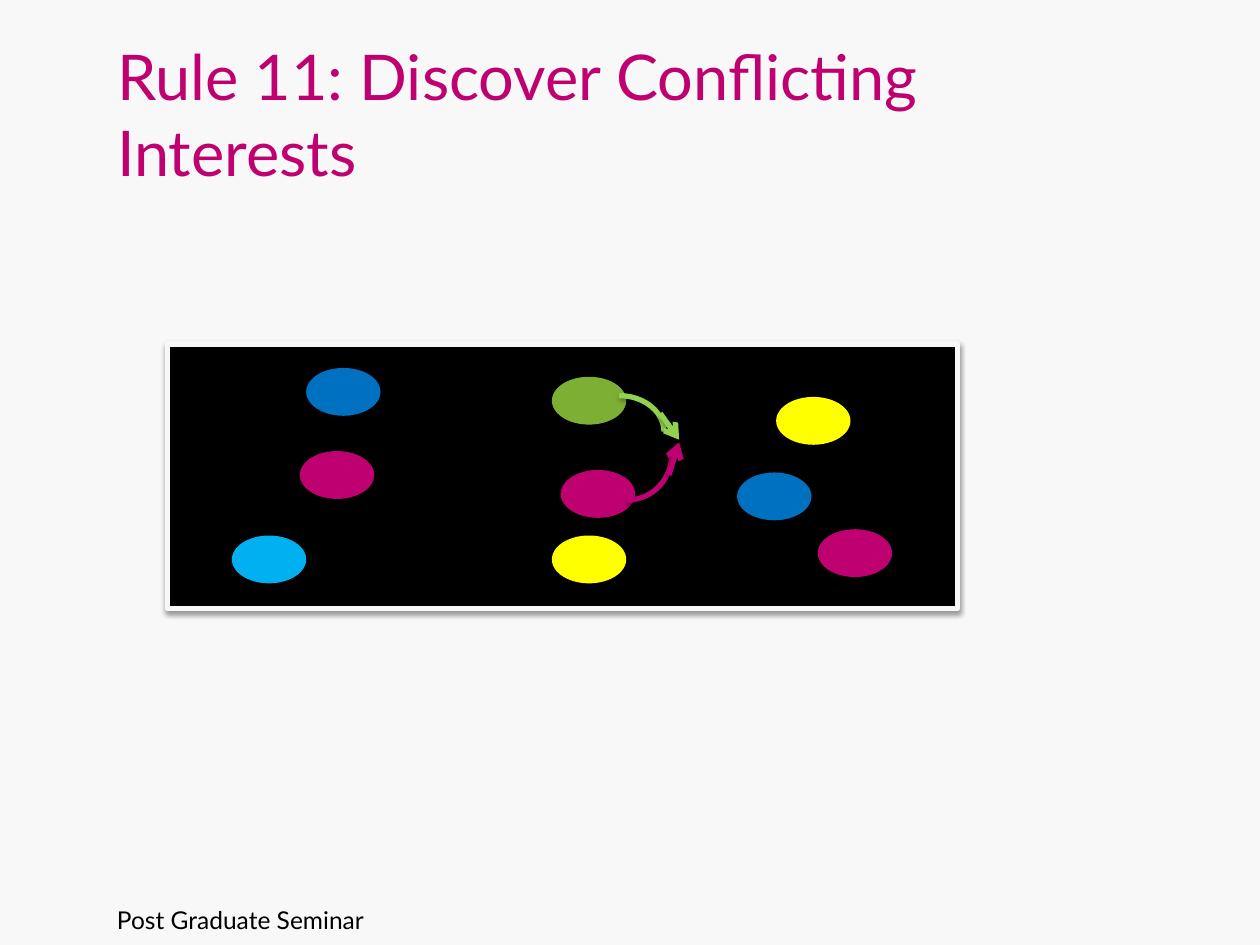
from lxml import etree
from pptx import Presentation
from pptx.dml.color import RGBColor
from pptx.enum.shapes import MSO_CONNECTOR, MSO_SHAPE
from pptx.enum.text import MSO_ANCHOR, PP_ALIGN
from pptx.oxml.ns import qn
from pptx.util import Inches, Pt

RECTANGLE, ELLIPSE, ARC = MSO_SHAPE.RECTANGLE, MSO_SHAPE.OVAL, MSO_SHAPE.ARC
STRAIGHT = MSO_CONNECTOR.STRAIGHT
TOP, BOTTOM, LEFT = MSO_ANCHOR.TOP, MSO_ANCHOR.BOTTOM, PP_ALIGN.LEFT

COLORS = {
    "background": "F8F8F8", "black": "000000", "magenta": "BF0071",
    "blue": "0070C0", "sky": "00B0F0", "yellow": "FFFF00",
    "green": "7EAF35", "lime": "92D050",
}
INTERESTS = [
    ("magenta", 4.45, 3.73), ("magenta", 6.49, 4.2), ("blue", 2.43, 2.92),
    ("sky", 1.84, 4.25), ("yellow", 4.38, 4.25), ("green", 4.38, 2.99),
    ("yellow", 6.16, 3.15), ("blue", 5.85, 3.75), ("magenta", 2.38, 3.58),
]


class SlideBuilder:
    """Hold the slide and its style, and draw each kind of element."""

    font_name = "Lato"
    line_width = Pt(3)
    interest_size = (0.59, 0.38)

    def __init__(self, slide):
        self.slide = slide
        fill = slide.background.fill
        fill.solid()
        fill.fore_color.rgb = self.color("background")

    def color(self, name):
        return RGBColor.from_string(COLORS[name])

    def set_text(self, shape, text, size, color, anchor):
        frame = shape.text_frame
        frame.text = text
        for name, value in {"word_wrap": True, "vertical_anchor": anchor}.items():
            setattr(frame, name, value)
        paragraph = frame.paragraphs[0]
        paragraph.alignment = LEFT
        font = paragraph.runs[0].font
        for name, value in {"name": self.font_name, "size": Pt(size)}.items():
            setattr(font, name, value)
        font.color.rgb = self.color(color)

    def title(self, text, left, top, width, height):
        shape = self.slide.shapes.title
        bounds = {"left": left, "top": top, "width": width, "height": height}
        for name, value in bounds.items():
            setattr(shape, name, Inches(value))
        self.set_text(shape, text, 36, "magenta", BOTTOM)

    def footer(self, text, *bounds):
        shape = self.slide.shapes.add_textbox(*map(Inches, bounds))
        self.set_text(shape, text, 14, "black", TOP)

    def shape(self, kind, bounds, fill=None, line=None):
        shape = self.slide.shapes.add_shape(kind, *map(Inches, bounds))
        shape.shadow.inherit = False
        if fill:
            shape.fill.solid()
            shape.fill.fore_color.rgb = self.color(fill)
        else:
            shape.fill.background()
        if line:
            self.outline(shape, line)
        else:
            shape.line.fill.background()
        return shape

    def outline(self, shape, color):
        shape.line.color.rgb = self.color(color)
        shape.line.width = self.line_width

    def shadow(self, effects, opacity, distance):
        shadow = etree.SubElement(
            effects, qn("a:outerShdw"), blurRad=str(Pt(3.1)),
            dist=str(Pt(distance)), dir="5400000", rotWithShape="0")
        color = etree.SubElement(shadow, qn("a:srgbClr"), val=COLORS["black"])
        etree.SubElement(color, qn("a:alpha"), val=str(opacity * 1000))

    def panel(self, *bounds):
        shape = self.shape(RECTANGLE, bounds, "black", "background")
        self.shadow(shape._element.spPr.find(qn("a:effectLst")), 38, 1.6)

    def interest(self, color, left, top):
        self.shape(ELLIPSE, (left, top, *self.interest_size), color)

    def arc(self, color, bounds, flipped=False):
        shape = self.shape(ARC, bounds, line=color)
        properties = shape._element.spPr
        if flipped:
            properties.find(qn("a:xfrm")).set("flipV", "1")
        self.shadow(properties.find(qn("a:effectLst")), 35, 1.8)

    def arrow(self, color, start, end):
        connector = self.slide.shapes.add_connector(
            STRAIGHT, *map(Inches, start + end))
        self.outline(connector, color)
        properties = connector._element.spPr
        etree.SubElement(properties.find(qn("a:ln")), qn("a:tailEnd"), type="arrow")
        self.shadow(etree.SubElement(properties, qn("a:effectLst")), 35, 1.8)


def main():
    presentation = Presentation()
    presentation.slide_width, presentation.slide_height = Inches(10), Inches(7.5)
    builder = SlideBuilder(
        presentation.slides.add_slide(presentation.slide_layouts[5]))

    builder.footer("Post Graduate Seminar", 0.83, 7.13, 6.93, 0.52)
    builder.title("Rule 11: Discover Conflicting Interests", 0.83, 0.3, 6.77, 1.25)
    builder.panel(1.33, 2.73, 6.27, 2.1)
    for interest in INTERESTS:
        builder.interest(*interest)
    builder.arc("lime", (4.56, 3.14, 0.71, 0.57))
    builder.arc("magenta", (4.62, 3.26, 0.71, 0.71), flipped=True)
    builder.arrow("magenta", (5.31, 3.77), (5.39, 3.51))
    builder.arrow("lime", (5.24, 3.28), (5.39, 3.49))

    presentation.save("out.pptx")


if __name__ == "__main__":
    main()
